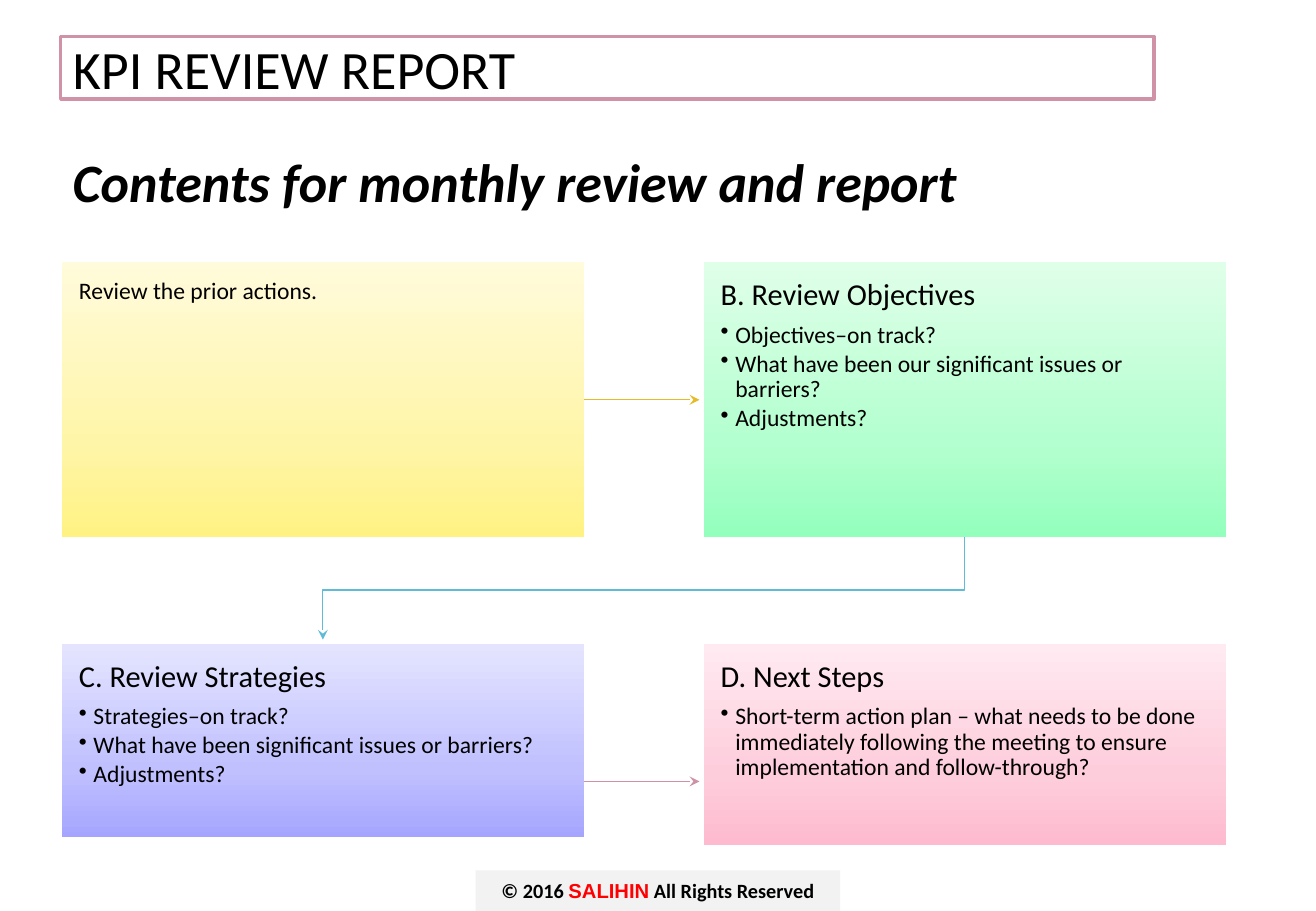
from dataclasses import dataclass

from lxml import etree
from pptx import Presentation, util as u
from pptx.dml.color import RGBColor
from pptx.enum import shapes, text
from pptx.oxml.ns import qn

PX = 7620  # EMU per px, 120 px to the inch


@dataclass(frozen=True)
class Theme:
    font: str = "Calibri"
    accent_font: str = "Arial"
    ink: str = "000000"
    paper: str = "FFFFFF"
    accent: str = "FF0000"
    footer: str = "F2F2F2"
    frame: str = "D092A7"
    yellow: tuple = ("FFF283", "FFF5A9", "FFFBDB")
    green: tuple = ("93FFBD", "B4FFCF", "DFFFE9")
    violet: tuple = ("A5A5FF", "C0C0FF", "E4E4FF")
    pink: tuple = ("FEBACF", "FECDDC", "FFEAF1")
    gold_arrow: str = "E6BB27"
    blue_arrow: str = "60BCD6"
    rose_arrow: str = "CE91A6"
    title_size: int = 32
    heading_size: int = 18
    body_size: int = 14
    footer_size: int = 12


class ReviewSlide:
    def __init__(self, presentation, theme):
        self.theme = theme
        self.slide = presentation.slides.add_slide(presentation.slide_layouts[5])

    def place(self, shape, left, top, width, height):
        shape.left, shape.top = left * PX, top * PX
        shape.width, shape.height = width * PX, height * PX

    def frame(self, shape, inset_x, inset_y, anchor):
        frame = shape.text_frame
        frame.word_wrap = True
        frame.auto_size = text.MSO_AUTO_SIZE.NONE
        frame.vertical_anchor = anchor
        frame.margin_left = frame.margin_right = inset_x * PX
        frame.margin_top = frame.margin_bottom = inset_y * PX
        return frame

    def run(self, paragraph, words, size, color=None, font=None, bold=False, italic=False):
        run = paragraph.add_run()
        run.text = words
        run.font.name = font or self.theme.font
        run.font.size = u.Pt(size)
        run.font.bold, run.font.italic = bold, italic
        run.font.color.rgb = RGBColor.from_string(color or self.theme.ink)

    def title(self, words, *box):
        shape = self.slide.shapes.title
        self.place(shape, *box)
        shape.fill.solid()
        shape.fill.fore_color.rgb = RGBColor.from_string(self.theme.paper)
        shape.line.color.rgb = RGBColor.from_string(self.theme.frame)
        shape.line.width = u.Pt(2)
        paragraph = self.frame(shape, 12, 12, text.MSO_ANCHOR.MIDDLE).paragraphs[0]
        paragraph.alignment = text.PP_ALIGN.LEFT
        self.run(paragraph, words, self.theme.title_size)

    def subtitle(self, words, *box):
        shape = self.slide.shapes.add_textbox(*(value * PX for value in box))
        paragraph = self.frame(shape, 12, 12, text.MSO_ANCHOR.MIDDLE).paragraphs[0]
        self.run(paragraph, words, self.theme.title_size, bold=True, italic=True)

    def rectangle(self, *box):
        shape = self.slide.shapes.add_shape(
            shapes.MSO_SHAPE.RECTANGLE, *(value * PX for value in box))
        shape.shadow.inherit = False
        shape.line.fill.background()
        return shape

    def footer(self, parts, *box):
        shape = self.rectangle(*box)
        shape.fill.solid()
        shape.fill.fore_color.rgb = RGBColor.from_string(self.theme.footer)
        paragraph = self.frame(shape, 12, 6, text.MSO_ANCHOR.MIDDLE).paragraphs[0]
        paragraph.alignment = text.PP_ALIGN.CENTER
        for words, color, font in parts:
            self.run(paragraph, words, self.theme.footer_size, color, font, bold=True)

    def gradient(self, shape, colors):
        shape.fill.gradient()
        shape.fill.gradient_angle = 90
        stops = shape.element.spPr.find(".//" + qn("a:gsLst"))
        for stop in list(stops):
            stops.remove(stop)
        for position, color in zip((0, 35000, 100000), colors):
            stop = etree.SubElement(stops, qn("a:gs"), pos=str(position))
            etree.SubElement(stop, qn("a:srgbClr"), val=color)

    def bullet(self, paragraph):
        paragraph.level = 1
        properties = paragraph._p.get_or_add_pPr()
        indent = u.Inches(0.12)
        properties.set("marL", str(indent))
        properties.set("indent", str(-indent))
        color = etree.SubElement(properties, qn("a:buClr"))
        etree.SubElement(color, qn("a:srgbClr"), val=self.theme.ink)
        etree.SubElement(properties, qn("a:buChar"), char="•")

    def card(self, colors, heading, heading_size, bullets, *box):
        shape = self.rectangle(*box)
        self.gradient(shape, colors)
        frame = self.frame(shape, 17, 17, text.MSO_ANCHOR.TOP)
        for index, words in enumerate([heading, *bullets]):
            paragraph = frame.add_paragraph() if index else frame.paragraphs[0]
            if index:
                self.bullet(paragraph)
                paragraph.space_before = u.Pt(6.3 if index == 1 else 2.1)
            paragraph.alignment = text.PP_ALIGN.LEFT
            paragraph.line_spacing = 0.9
            self.run(paragraph, words, self.theme.body_size if index else heading_size)
        return shape

    def arrow_line(self, shape, color):
        shape.line.color.rgb = RGBColor.from_string(color)
        shape.line.width = u.Pt(0.75)
        properties = shape.element.spPr
        etree.SubElement(properties.find(qn("a:ln")), qn("a:tailEnd"), type="stealth")

    def arrow(self, color, start, end, source=None):
        connector = self.slide.shapes.add_connector(
            shapes.MSO_CONNECTOR.STRAIGHT, *(value * PX for value in (*start, *end)))
        if source is not None:
            connector.begin_connect(source, 3)
        self.arrow_line(connector, color)
        etree.SubElement(connector.element.spPr, qn("a:effectLst"))

    def bent_arrow(self, color, start, *points):
        builder = self.slide.shapes.build_freeform(*start, scale=PX)
        builder.add_line_segments(points, close=False)
        shape = builder.convert_to_shape()
        shape.fill.background()
        shape.shadow.inherit = False
        self.arrow_line(shape, color)


def main():
    theme = Theme()
    presentation = Presentation()
    presentation.slide_width, presentation.slide_height = 1300 * PX, 900 * PX
    page = ReviewSlide(presentation, theme)

    # Headings and footer
    page.title("KPI REVIEW REPORT", 60, 36, 1080, 62)
    page.subtitle("Contents for monthly review and report", 60, 136, 1180, 86)
    page.footer([("© 2016 ", theme.ink, theme.font),
                 ("SALIHIN", theme.accent, theme.accent_font),
                 (" All Rights Reserved", theme.ink, theme.font)], 470, 860, 360, 40)

    # Two by two grid of review steps
    left, right, width = 61, 695, 516
    top, top_height, bottom = 259, 272, 636
    prior = page.card(theme.yellow, "Review the prior actions.", theme.body_size, [],
                      left, top, width, top_height)
    page.card(theme.green, "B. Review Objectives", theme.heading_size,
              ["Objectives–on track?",
               "What have been our significant issues or barriers?",
               "Adjustments?"], right, top, width, top_height)
    page.card(theme.violet, "C. Review Strategies", theme.heading_size,
              ["Strategies–on track?",
               "What have been significant issues or barriers?",
               "Adjustments?"], left, bottom, width, 191)
    page.card(theme.pink, "D. Next Steps", theme.heading_size,
              ["Short-term action plan – what needs to be done immediately following "
               "the meeting to ensure implementation and follow-through?"],
              right, bottom, width, 199)

    # Arrows stop a little short of the next step
    gap = 4
    edge, middle = left + width, top + top_height // 2
    page.arrow(theme.gold_arrow, (edge, middle), (right - gap, middle), prior)
    page.arrow(theme.rose_arrow, (edge, 772), (right - gap, 772))
    start_x, end_x, turn = right + width // 2, left + width // 2, 583
    page.bent_arrow(theme.blue_arrow, (start_x, top + top_height), (start_x, turn),
                    (end_x, turn), (end_x, bottom - gap))

    presentation.save("out.pptx")


if __name__ == "__main__":
    main()
